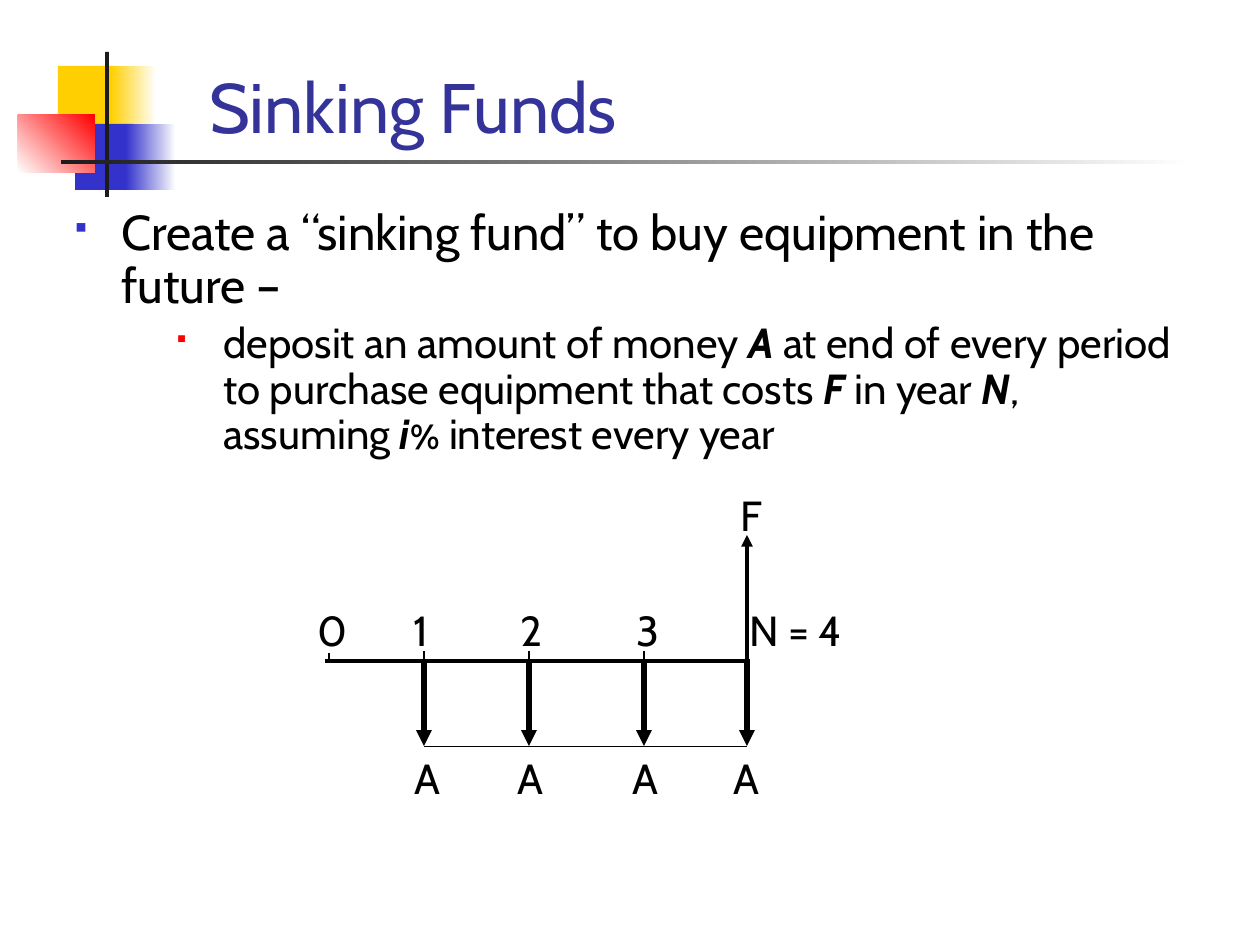
from lxml import etree
from pptx import Presentation
from pptx import util as u
from pptx.dml.color import RGBColor
from pptx.enum import shapes, text
from pptx.oxml.ns import qn

PX = 914400 / 126
FONT = "Cabin"
COLORS = {
    "yellow": "FFCF01", "blue": "3333CC", "red": "FF0000", "white": "FFFFFF",
    "charcoal": "1C1C1C", "title": "333399", "black": "000000",
}


def add_run(paragraph, words, size, color="black", strong=False, bold=False):
    """Add one run; strong means bold italic."""
    run = paragraph.add_run()
    run.text = words
    run.font.name = FONT
    run.font.size = u.Pt(size)
    run.font.bold = strong or bold
    run.font.italic = strong
    run.font.color.rgb = RGBColor.from_string(COLORS[color])


def add_line(start, end, width, arrow=False):
    points = [round(value * PX) for value in (*start, *end)]
    line = slide.shapes.add_connector(shapes.MSO_CONNECTOR.STRAIGHT, *points)
    line.line.width = u.Pt(width)
    line.line.color.rgb = RGBColor.from_string(COLORS["black"])
    if arrow:
        etree.SubElement(line.line._get_or_add_ln(), qn("a:tailEnd"), type="triangle")
    etree.SubElement(line._element.spPr, qn("a:effectLst"))


presentation = Presentation()
presentation.slide_width = u.Inches(10)
presentation.slide_height = u.Inches(7.5)
slide = presentation.slides.add_slide(presentation.slide_layouts[5])

# Corner decoration: box, colour at the start, colour at the end, angle
decoration = [
    ((58, 66, 60, 66), "yellow", None, 0),
    ((111, 66, 45, 66), "yellow", "white", 0),
    ((75, 124, 58, 66), "blue", None, 0),
    ((126, 124, 50, 66), "blue", "white", 0),
    ((18, 115, 77, 58), "white", "red", 45),
    ((105, 52, 4, 145), "charcoal", None, 0),
    ((61, 160, 1134, 4), "charcoal", "white", 0),
]
for box, first, last, angle in decoration:
    shape = slide.shapes.add_shape(
        shapes.MSO_SHAPE.RECTANGLE, *[round(value * PX) for value in box])
    shape.shadow.inherit = False
    shape.line.fill.background()
    if last:
        shape.fill.gradient()
        shape.fill.gradient_angle = angle
        for stop, color in zip(shape.fill.gradient_stops, (first, last)):
            stop.color.rgb = RGBColor.from_string(COLORS[color])
    else:
        shape.fill.solid()
        shape.fill.fore_color.rgb = RGBColor.from_string(COLORS[first])

# Title
title = slide.shapes.title
title.left, title.top, title.width, title.height = [
    round(value * PX) for value in (197, 57, 685, 97)]
title.text_frame.auto_size = text.MSO_AUTO_SIZE.NONE
title.text_frame.vertical_anchor = text.MSO_ANCHOR.BOTTOM
paragraph = title.text_frame.paragraphs[0]
paragraph.alignment = text.PP_ALIGN.LEFT
add_run(paragraph, "Sinking Funds", 40, "title")

# Bullets: level, left margin in px, size, bullet colour, bullet percent, runs
bullets = [
    (0, 47, 28, "blue", 60,
     ["Create a “sinking fund” to buy equipment in the future –"]),
    (1, 149, 24, "red", 55,
     ["deposit an amount of money ", "A",
      " at end of every period to purchase equipment that costs ", "F",
      " in year ", "N", ", assuming ", "i", "%", " interest every year"]),
]
body = slide.shapes.add_textbox(*[round(value * PX) for value in (62, 202, 1124, 267)])
body.text_frame.word_wrap = True
for level, margin, size, color, percent, runs in bullets:
    paragraph = body.text_frame.paragraphs[0] if level == 0 else body.text_frame.add_paragraph()
    paragraph.level = level
    paragraph.line_spacing = 0.9
    paragraph.space_before = u.Pt(size * 0.2)
    properties = paragraph._p.get_or_add_pPr()
    properties.set("marL", str(round(margin * PX)))
    properties.set("indent", str(round(-47 * PX)))
    bullet_color = etree.SubElement(properties, qn("a:buClr"))
    etree.SubElement(bullet_color, qn("a:srgbClr"), val=COLORS[color])
    etree.SubElement(properties, qn("a:buSzPct"), val=str(percent * 1000))
    # In Wingdings this character is the small square
    etree.SubElement(properties, qn("a:buFont"), typeface="Wingdings", charset="2")
    etree.SubElement(properties, qn("a:buChar"), char="§")
    for words in runs:
        add_run(paragraph, words, 20 if words == "%" else size,
                strong=len(words) == 1 and words != "%", bold=words == "%")

# Cash flow diagram
axis_y, deposit_y = 661, 746
periods = [424, 529, 644, 747]
add_line((325, axis_y), (750, axis_y), 2.25)
add_line((329, axis_y), (329, 653), 1.5)
for x in periods[:-1]:
    add_line((x, 651), (x, 672), 1)
for x in periods:
    add_line((x, axis_y), (x, deposit_y), 3, arrow=True)
add_line((periods[-1], axis_y), (periods[-1], 535), 2.25, arrow=True)
add_line((periods[0], deposit_y), (periods[-1], deposit_y), 0.25)

# Diagram labels: words, left, top, width
labels = [("0", 305, 598, 49), ("1", 401, 598, 49), ("2", 508, 598, 49),
          ("3", 624, 598, 49), ("N = 4", 737, 598, 155), ("F", 728, 483, 44)]
labels += [("A", left, deposit_y, 50) for left in (402, 505, 620, 721)]
for words, left, top, width in labels:
    label = slide.shapes.add_textbox(
        *[round(value * PX) for value in (left, top, width, 64)])
    label.text_frame.word_wrap = True
    add_run(label.text_frame.paragraphs[0], words, 24)

presentation.save("out.pptx")
